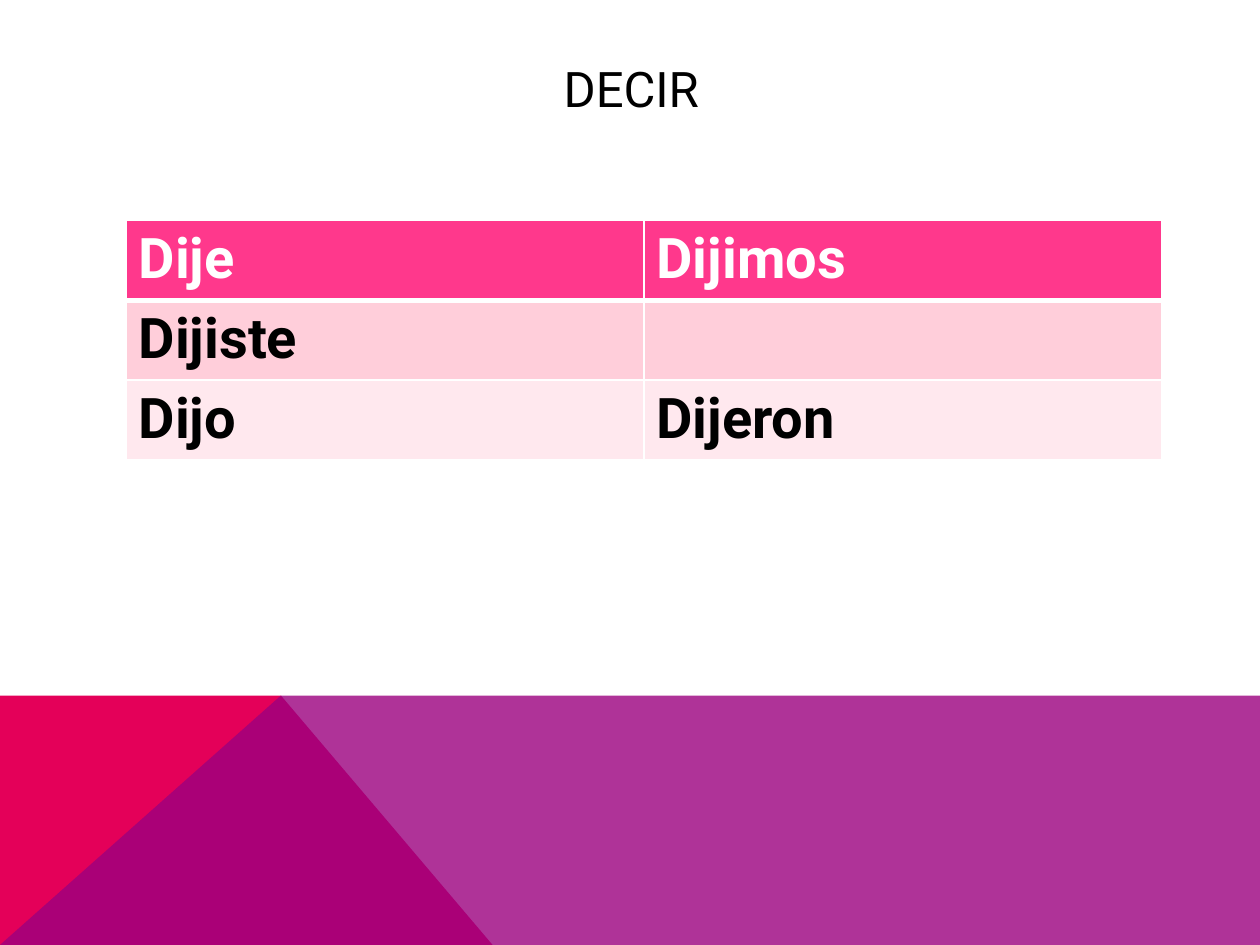
from dataclasses import dataclass

from pptx import Presentation
from pptx.dml.color import RGBColor as Rgb
from pptx.enum.text import MSO_ANCHOR as Anchor, PP_ALIGN as Align
from pptx.oxml.ns import qn
from pptx.oxml.xmlchemy import OxmlElement as Element
from pptx.slide import Slide
from pptx.util import Inches, Pt


@dataclass(frozen=True)
class Theme:
    font: str = "Roboto"
    title_size: int = 28
    cell_size: int = 32
    black: str = "000000"
    white: str = "FFFFFF"
    red: str = "E40059"
    purple: str = "9C007F"
    row_fills: tuple[str, ...] = ("FF388C", "FFCEDA", "FFE8EE")
    thin_border: int = 1
    header_border: int = 3


@dataclass(frozen=True)
class Band:
    points: tuple[tuple[float, float], ...]
    color: str
    opacity: int = 100


THEME = Theme()
WIDTH, HEIGHT = 10, 7.5
BAND_TOP, PEAK = 5.52, 2.23
BANDS = (
    Band(((0, HEIGHT), (0, BAND_TOP), (PEAK, BAND_TOP), (3.91, HEIGHT)), THEME.red),
    Band(((0, HEIGHT), (PEAK, BAND_TOP), (WIDTH, BAND_TOP), (WIDTH, HEIGHT)), THEME.purple, 80),
)
CONJUGATION = (("Dije", "Dijimos"), ("Dijiste", ""), ("Dijo", "Dijeron"))
ROW_HEIGHT = 0.62


def draw_band(slide: Slide, band: Band) -> None:
    start, *others = [(Inches(x), Inches(y)) for x, y in band.points]
    builder = slide.shapes.build_freeform(*start)
    builder.add_line_segments(others, close=True)
    shape = builder.convert_to_shape()
    shape.shadow.inherit = False
    shape.line.fill.background()
    shape.fill.solid()
    shape.fill.fore_color.rgb = Rgb.from_string(band.color)
    if band.opacity < 100:
        alpha = Element("a:alpha")
        alpha.set("val", str(band.opacity * 1000))
        shape.element.spPr.find(f".//{qn('a:srgbClr')}").append(alpha)


def write(paragraph, text: str, size: int, color: str, bold: bool) -> None:
    run = paragraph.add_run()
    run.text = text
    formats = {"name": THEME.font, "size": Pt(size), "bold": bold}
    for name, value in formats.items():
        setattr(run.font, name, value)
    run.font.color.rgb = Rgb.from_string(color)


def draw_title(slide: Slide, text: str) -> None:
    box = slide.shapes.add_textbox(Inches(0.9), Inches(0.4), Inches(8.22), Inches(0.6))
    frame = box.text_frame
    for name, value in {"word_wrap": True, "vertical_anchor": Anchor.MIDDLE}.items():
        setattr(frame, name, value)
    paragraph = frame.paragraphs[0]
    paragraph.alignment = Align.CENTER
    write(paragraph, text, THEME.title_size, THEME.black, False)


def set_border(cell, side: str, width: int) -> None:
    line = Element(f"a:ln{side}")
    line.set("w", str(Pt(width)))
    fill = Element("a:solidFill")
    color = Element("a:srgbClr")
    color.set("val", THEME.white)
    fill.append(color)
    line.append(fill)
    cell._tc.get_or_add_tcPr().append(line)


def draw_table(slide: Slide, rows: tuple[tuple[str, ...], ...]) -> None:
    frame = slide.shapes.add_table(
        len(rows), len(rows[0]), Inches(1), Inches(1.75), Inches(8.22), Inches(ROW_HEIGHT * len(rows))
    )
    for row_index, texts in enumerate(rows):
        color = THEME.black if row_index else THEME.white
        widths = dict.fromkeys("LRTB", THEME.thin_border)
        if row_index < 2:
            widths["T" if row_index else "B"] = THEME.header_border
        for column_index, text in enumerate(texts):
            cell = frame.table.cell(row_index, column_index)
            for side, width in widths.items():
                set_border(cell, side, width)
            cell.fill.solid()
            cell.fill.fore_color.rgb = Rgb.from_string(THEME.row_fills[row_index])
            if text:
                write(cell.text_frame.paragraphs[0], text, THEME.cell_size, color, True)


def main() -> None:
    presentation = Presentation()
    presentation.slide_width = Inches(WIDTH)
    presentation.slide_height = Inches(HEIGHT)
    slide = presentation.slides.add_slide(presentation.slide_layouts[6])
    for band in BANDS:
        draw_band(slide, band)
    draw_title(slide, "DECIR")
    draw_table(slide, CONJUGATION)
    presentation.save("out.pptx")


if __name__ == "__main__":
    main()
